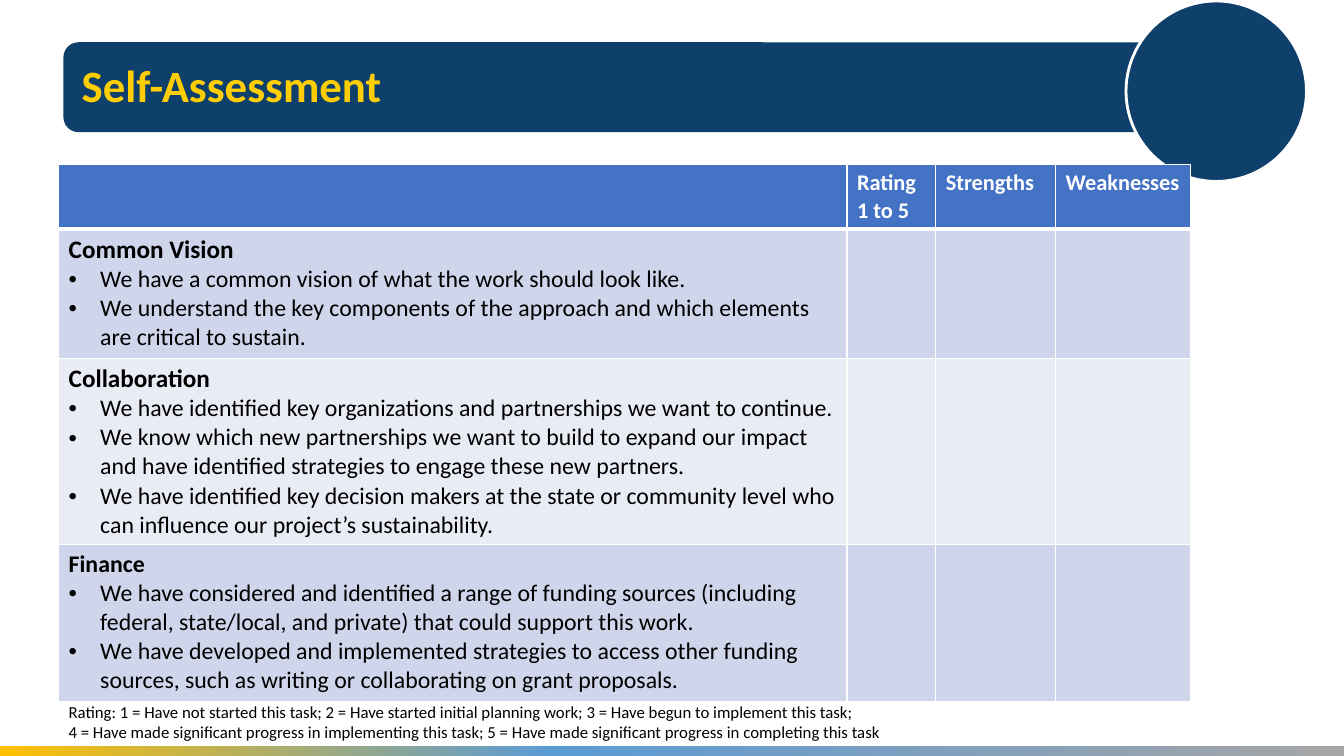
import pptx
import pptx.dml.color
import pptx.enum.shapes
import pptx.enum.text
import pptx.oxml.ns
import pptx.util
from lxml import etree

Pt = pptx.util.Pt
qn = pptx.oxml.ns.qn
Shape = pptx.enum.shapes.MSO_SHAPE
Anchor = pptx.enum.text.MSO_ANCHOR
AutoSize = pptx.enum.text.MSO_AUTO_SIZE
Align = pptx.enum.text.PP_ALIGN

COLORS = {
    "white": "FFFFFF", "black": "000000", "navy": "0F406B", "yellow": "FFCE02",
    "header": "4472C4", "band_dark": "CFD5EA", "band_light": "E9EBF5",
    "gold": "FFC000", "blue": "5B9BD5", "gray": "A5A5A5",
}

HEADERS = [[], ["Rating", "1 to 5"], ["Strengths"], ["Weaknesses"]]
COLUMN_WIDTHS = [563.1, 63.4, 85.7, 96.5]
HEADER_HEIGHT = 46.3
SECTIONS = [
    ("Common Vision", 18, 92.2, [
        "We have a common vision of what the work should look like.",
        "We understand the key components of the approach and which elements are critical to sustain.",
    ]),
    ("Collaboration", 18, 132.9, [
        "We have identified key organizations and partnerships we want to continue.",
        "We know which new partnerships we want to build to expand our impact and have identified strategies to engage these new partners.",
        "We have identified key decision makers at the state or community level who can influence our project’s sustainability.",
    ]),
    ("Finance", 17, 112, [
        "We have considered and identified a range of funding sources (including federal, state/local, and private) that could support this work.",
        "We have developed and implemented strategies to access other funding sources, such as writing or collaborating on grant proposals.",
    ]),
]
RATING_KEY = [
    "Rating: 1 = Have not started this task; 2 = Have started initial planning work; 3 = Have begun to implement this task;",
    "4 = Have made significant progress in implementing this task; 5 = Have made significant progress in completing this task",
]


class SlideBuilder:
    font = "Calibri"

    def __init__(self, slide):
        self.slide = slide

    def color(self, name):
        return pptx.dml.color.RGBColor.from_string(COLORS[name])

    def add_paragraph(self, frame, text, size, color, bold=False, bullet=False):
        paragraph = frame.paragraphs[0]
        if paragraph.runs:
            paragraph = frame.add_paragraph()
        if bullet:
            properties = paragraph._p.get_or_add_pPr()
            properties.set("marL", str(Pt(22.5)))
            properties.set("indent", str(-Pt(22.5)))
            etree.SubElement(properties, qn("a:buFont"), typeface="Arial")
            etree.SubElement(properties, qn("a:buChar"), char="•")
        run = paragraph.add_run()
        run.text = text
        run.font.name = self.font
        run.font.size = Pt(size)
        run.font.bold = bold
        run.font.color.rgb = self.color(color)
        return paragraph

    def add_shape(self, kind, box, fill, line=None):
        shape = self.slide.shapes.add_shape(kind, *map(Pt, box))
        shape.shadow.inherit = False
        shape.fill.solid()
        shape.fill.fore_color.rgb = self.color(fill)
        if line:
            shape.line.color.rgb = self.color(line)
            shape.line.width = Pt(2)
        else:
            shape.line.fill.background()
        return shape

    def add_gradient_bar(self, box, stops):
        shape = self.add_shape(Shape.RECTANGLE, box, stops[0][1])
        shape.fill.gradient()
        shape.fill.gradient_angle = 0
        stop_list = shape.element.find(".//" + qn("a:gsLst"))
        for stop in list(stop_list):
            stop_list.remove(stop)
        for percent, name in stops:
            stop = etree.SubElement(stop_list, qn("a:gs"), pos=str(percent * 1000))
            etree.SubElement(stop, qn("a:srgbClr"), val=COLORS[name])

    def add_title(self, text, box):
        title = self.slide.shapes.title
        title.element.getparent().append(title.element)
        title.left, title.top, title.width, title.height = map(Pt, box)
        frame = title.text_frame
        frame.word_wrap = True
        frame.auto_size = AutoSize.NONE
        frame.vertical_anchor = Anchor.MIDDLE
        paragraph = self.add_paragraph(frame, text, 32, "yellow", bold=True)
        paragraph.alignment = Align.LEFT
        paragraph.line_spacing = 0.9

    def add_text(self, lines, box, size):
        frame = self.slide.shapes.add_textbox(*map(Pt, box)).text_frame
        frame.word_wrap = True
        for line in lines:
            self.add_paragraph(frame, line, size, "black")

    def format_cell(self, cell, fill, top=1, bottom=1):
        properties = cell._tc.get_or_add_tcPr()
        for side, width in zip("LRTB", (1, 1, top, bottom)):
            border = etree.SubElement(properties, qn("a:ln" + side), w=str(Pt(width)))
            solid = etree.SubElement(border, qn("a:solidFill"))
            etree.SubElement(solid, qn("a:srgbClr"), val=COLORS["white"])
        cell.fill.solid()
        cell.fill.fore_color.rgb = self.color(fill)

    def add_assessment_table(self, left, top):
        heights = [HEADER_HEIGHT] + [section[2] for section in SECTIONS]
        table = self.slide.shapes.add_table(
            len(heights), len(COLUMN_WIDTHS), Pt(left), Pt(top),
            Pt(sum(COLUMN_WIDTHS)), Pt(sum(heights))).table
        for column, width in zip(table.columns, COLUMN_WIDTHS):
            column.width = Pt(width)
        for row, height in zip(table.rows, heights):
            row.height = Pt(height)
        for cell, lines in zip(table.rows[0].cells, HEADERS):
            self.format_cell(cell, "header", bottom=3)
            for line in lines:
                self.add_paragraph(cell.text_frame, line, 16, "white", bold=True)
        for index, (heading, size, _, statements) in enumerate(SECTIONS, 1):
            for cell in table.rows[index].cells:
                self.format_cell(cell, "band_dark" if index % 2 else "band_light",
                                 top=3 if index == 1 else 1)
            frame = table.cell(index, 0).text_frame
            self.add_paragraph(frame, heading, size, "black", bold=True)
            for statement in statements:
                self.add_paragraph(frame, statement, 17, "black", bullet=True)


def main():
    presentation = pptx.Presentation()
    presentation.slide_width = Pt(960)
    presentation.slide_height = Pt(540)
    builder = SlideBuilder(presentation.slides.add_slide(presentation.slide_layouts[5]))
    builder.add_gradient_bar((0, 532.8, 960, 7.2), [(0, "gold"), (41, "blue"), (100, "gray")])
    builder.add_shape(Shape.ROUNDED_RECTANGLE, (45.3, 30.2, 800.7, 64.2), "navy")
    builder.add_shape(Shape.OVAL, (804.3, 0.7, 128.9, 128.9), "navy", line="white")
    builder.add_title("Self-Assessment", (51.1, 18, 672, 90))
    builder.add_assessment_table(41.9, 117.4)
    builder.add_text(RATING_KEY, (41.9, 497.5, 808.7, 36), 12)
    presentation.save("out.pptx")


if __name__ == "__main__":
    main()
